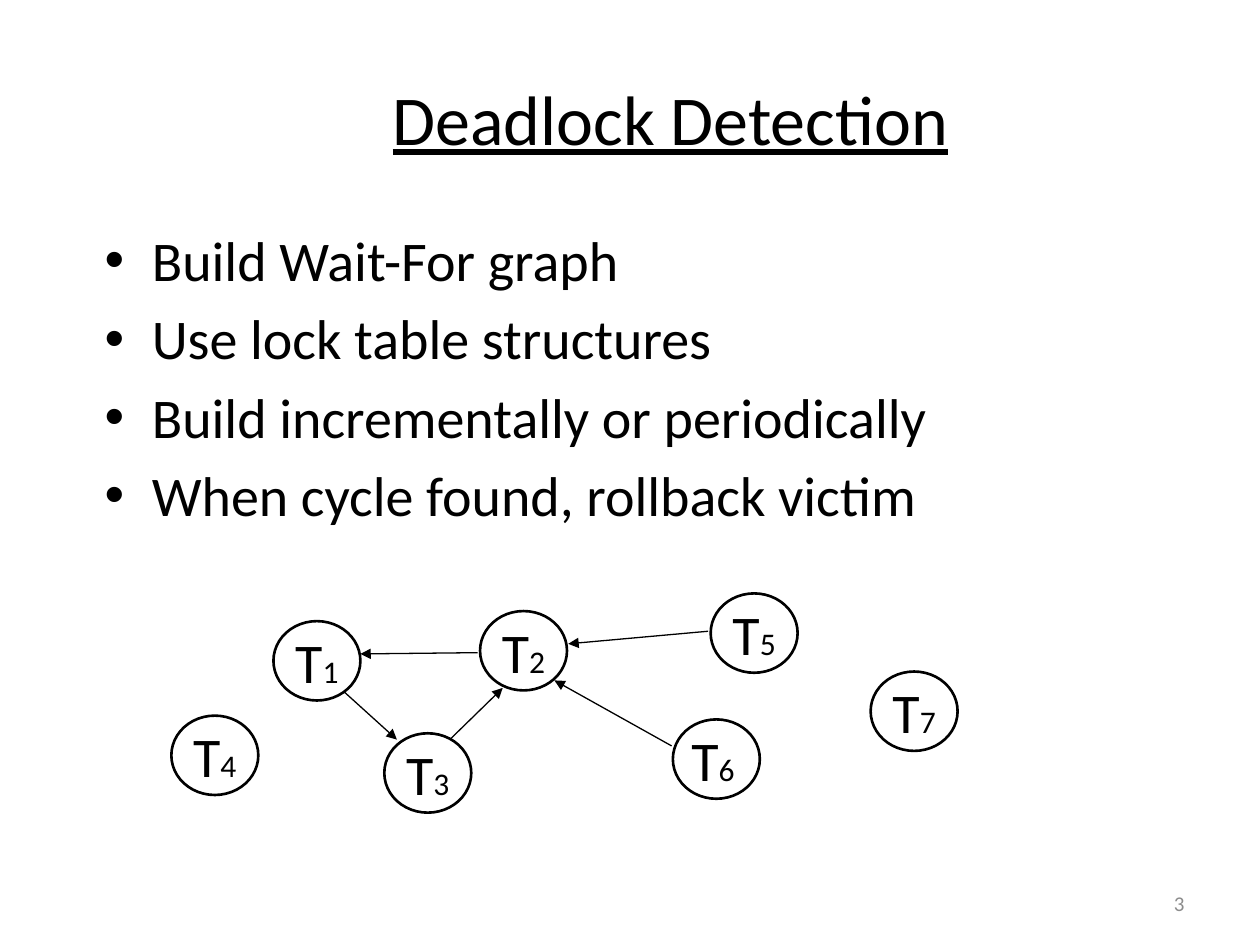
"""Build the Deadlock Detection slide with its wait-for graph."""
from lxml import etree
from pptx import Presentation
from pptx.dml.color import RGBColor
from pptx.enum.shapes import MSO_CONNECTOR, MSO_SHAPE
from pptx.enum.text import MSO_ANCHOR, MSO_AUTO_SIZE, PP_ALIGN
from pptx.oxml.ns import qn
from pptx.util import Inches, Pt

CENTER, RIGHT, LEFT = PP_ALIGN.CENTER, PP_ALIGN.RIGHT, PP_ALIGN.LEFT
MIDDLE, TOP = MSO_ANCHOR.MIDDLE, MSO_ANCHOR.TOP
OVAL, STRAIGHT = MSO_SHAPE.OVAL, MSO_CONNECTOR.STRAIGHT
NO_FIT = MSO_AUTO_SIZE.NONE

TITLE = "Deadlock Detection"
BULLETS = [
    "Build Wait-For graph",
    "Use lock table structures",
    "Build incrementally or periodically",
    "When cycle found, rollback victim",
]
PAGE = "3"
NODES = [
    ("1", 2.17, 4.93, CENTER),
    ("3", 3.05, 5.82, CENTER),
    ("2", 3.81, 4.85, CENTER),
    ("6", 5.34, 5.71, RIGHT),
    ("5", 5.64, 4.71, CENTER),
    ("4", 1.36, 5.68, CENTER),
    ("7", 6.91, 5.33, CENTER),
]
WAITS = [
    (2.73, 5.49, 3.15, 5.87),
    (3.58, 5.86, 3.99, 5.46),
    (3.79, 5.18, 2.86, 5.19),
    (5.62, 5.01, 4.51, 5.11),
    (5.33, 5.92, 4.4, 5.4),
]
NODE_SIZE = (0.69, 0.63)
THEME = {
    "font": "Calibri",
    "ink": RGBColor(0, 0, 0),
    "paper": RGBColor(255, 255, 255),
    "muted": RGBColor(0x8C, 0x8C, 0x8C),
    "title": Pt(40),
    "body": Pt(32),
    "subscript": Pt(18),
    "page": Pt(12),
    "outline": Pt(1.5),
    "arrow": Pt(0.75),
}


def place(shape, *box):
    for name, value in zip(("left", "top", "width", "height"), box):
        setattr(shape, name, Inches(value))


def frame(shape, anchor, wrap=True):
    tf = shape.text_frame
    formats = {"auto_size": NO_FIT, "word_wrap": wrap, "vertical_anchor": anchor}
    for name, value in formats.items():
        setattr(tf, name, value)
    return tf


def add_run(p, text, size, color="ink", **extra):
    r = p.add_run()
    r.text = text
    formats = {"name": THEME["font"], "size": THEME[size], **extra}
    for name, value in formats.items():
        setattr(r.font, name, value)
    r.font.color.rgb = THEME[color]


def add_text(s):
    title, body = s.shapes.title, s.placeholders[1]
    place(title, 1.07, 0.46, 8.5, 0.94)
    p = frame(title, MIDDLE).paragraphs[0]
    p.alignment = CENTER
    add_run(p, TITLE, "title", underline=True)

    place(body, 0.73, 1.74, 8.5, 2.68)
    tf = frame(body, TOP)
    for i, text in enumerate(BULLETS):
        p = tf.add_paragraph() if i else tf.paragraphs[0]
        p.alignment = LEFT
        add_run(p, text, "body")

    page = s.shapes.add_textbox(*map(Inches, (7.42, 6.92, 2.08, 0.5)))
    p = frame(page, MIDDLE).paragraphs[0]
    p.alignment = RIGHT
    add_run(p, PAGE, "page", "muted")


def add_node(s, number, left, top, align):
    sp = s.shapes.add_shape(OVAL, *map(Inches, (left, top, *NODE_SIZE)))
    sp.shadow.inherit = False
    sp.fill.solid()
    sp.fill.fore_color.rgb = THEME["paper"]
    sp.line.color.rgb = THEME["ink"]
    sp.line.width = THEME["outline"]
    p = frame(sp, MIDDLE, wrap=False).paragraphs[0]
    p.alignment = align
    add_run(p, "T", "body")
    add_run(p, number, "subscript")


def add_arrow(s, ends):
    line = s.shapes.add_connector(STRAIGHT, *map(Inches, ends))
    line.line.color.rgb = THEME["ink"]
    line.line.width = THEME["arrow"]
    etree.SubElement(line.line._get_or_add_ln(), qn("a:tailEnd"), type="triangle")
    etree.SubElement(line._element.spPr, qn("a:effectLst"))


def main():
    prs = Presentation()
    prs.slide_width, prs.slide_height = Inches(10), Inches(7.5)
    s = prs.slides.add_slide(prs.slide_layouts[1])
    add_text(s)
    for node in NODES:
        add_node(s, *node)
    for ends in WAITS:
        add_arrow(s, ends)
    prs.save("out.pptx")


if __name__ == "__main__":
    main()
